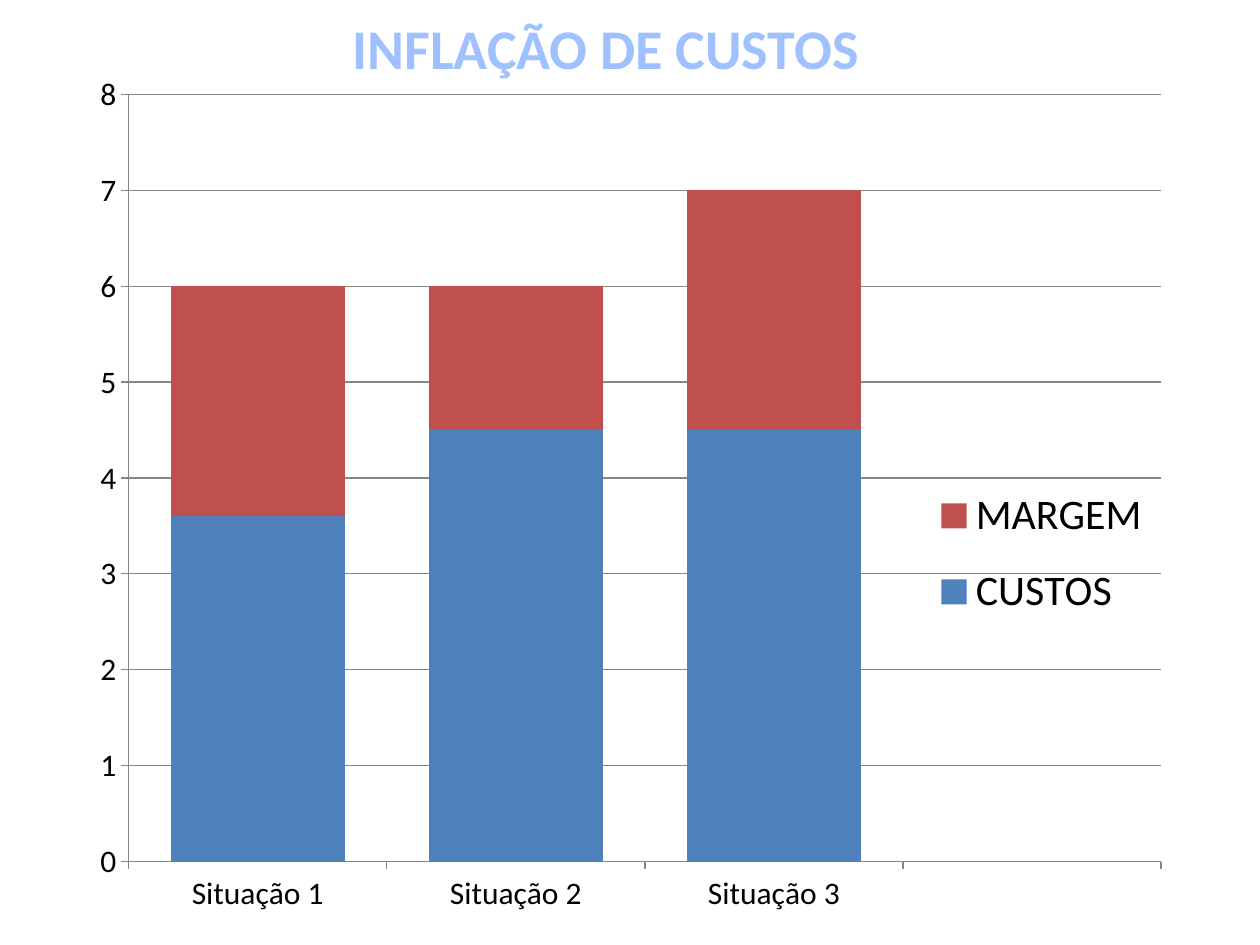
from lxml import etree
from pptx import Presentation
from pptx.chart.data import CategoryChartData
from pptx.dml.color import RGBColor
from pptx.enum.chart import XL_CHART_TYPE, XL_TICK_MARK
from pptx.enum.text import MSO_ANCHOR, PP_ALIGN
from pptx.oxml.ns import qn
from pptx.util import Cm, Pt

STACKED = XL_CHART_TYPE.COLUMN_STACKED
TICK_OUT, TICK_NONE = XL_TICK_MARK.OUTSIDE, XL_TICK_MARK.NONE
LEFT, MIDDLE = PP_ALIGN.LEFT, MSO_ANCHOR.MIDDLE

THEME = {
    "font": "Calibri",
    "title_size": Pt(32),
    "axis_size": Pt(18),
    "legend_size": Pt(24),
    "line_width": Pt(0.75),
    "title": RGBColor.from_string("A0C1FF"),
    "text": RGBColor.from_string("000000"),
    "line": RGBColor.from_string("868686"),
    "series": {
        "CUSTOS": RGBColor.from_string("4F81BD"),
        "MARGEM": RGBColor.from_string("C0504D"),
    },
}


def format_font(font, size, color, bold=False):
    for name, value in {"name": THEME["font"], "size": size, "bold": bold}.items():
        setattr(font, name, value)
    font.color.rgb = color


def place_in_chart(element, index, fractions, inner=False):
    """Give a chart part a manual layout, in fractions of the chart's size."""
    for old in element.findall(qn("c:layout")):
        element.remove(old)
    layout = etree.Element(qn("c:layout"))
    manual = etree.SubElement(layout, qn("c:manualLayout"))
    settings = {"layoutTarget": "inner"} if inner else {}
    settings |= {"xMode": "edge", "yMode": "edge"}
    settings |= dict(zip("xywh", fractions))
    for tag, value in settings.items():
        etree.SubElement(manual, qn(f"c:{tag}")).set("val", str(value))
    element.insert(index, layout)


prs = Presentation()
prs.slide_width, prs.slide_height = Cm(25.4), Cm(19.05)
slide = prs.slides.add_slide(prs.slide_layouts[5])

# Title
title = slide.shapes.title
title_place = {"left": Cm(5.31), "top": Cm(0.13), "width": Cm(15), "height": Cm(1.63)}
for name, value in title_place.items():
    setattr(title, name, value)
title_frame = title.text_frame
title_frame.text = "INFLAÇÃO DE CUSTOS"
title_frame.margin_left = Cm(1.8)
title_frame.vertical_anchor = MIDDLE
title_frame.paragraphs[0].alignment = LEFT
format_font(title_frame.paragraphs[0].runs[0].font,
            THEME["title_size"], THEME["title"], bold=True)

# Costs and margin; the empty fourth category leaves room for the legend
costs = CategoryChartData()
costs.categories = ["Situação 1", "Situação 2", "Situação 3", ""]
costs.add_series("CUSTOS", [3.6, 4.5, 4.5, None])
costs.add_series("MARGEM", [2.4, 1.5, 2.5, None])
chart = slide.shapes.add_chart(
    STACKED, Cm(1.5), Cm(1.52), Cm(21.92), Cm(17.04), costs).chart
chart.has_title = False
format_font(chart.font, THEME["axis_size"], THEME["text"])

columns = chart.plots[0]
for name, value in {"gap_width": 48, "overlap": 100, "vary_by_categories": False}.items():
    setattr(columns, name, value)
for series in columns.series:
    series.format.fill.solid()
    series.format.fill.fore_color.rgb = THEME["series"][series.name]

# Axes
scale = {"minimum_scale": 0, "maximum_scale": 8, "major_unit": 1,
         "has_major_gridlines": True}
for name, value in scale.items():
    setattr(chart.value_axis, name, value)
chart.category_axis.has_major_gridlines = False
for axis in (chart.category_axis, chart.value_axis):
    axis.major_tick_mark, axis.minor_tick_mark = TICK_OUT, TICK_NONE
for ruled in (chart.category_axis, chart.value_axis, chart.value_axis.major_gridlines):
    ruled.format.line.color.rgb = THEME["line"]
    ruled.format.line.width = THEME["line_width"]

# Legend
chart.has_legend = True
chart.legend.include_in_layout = False
format_font(chart.legend.font, THEME["legend_size"], THEME["text"])

plot_area = chart.element.find(f".//{qn('c:plotArea')}")
legend = chart.element.find(f".//{qn('c:legend')}")
place_in_chart(plot_area, 0, (0.05, 0.02, 0.95, 0.91), inner=True)
place_in_chart(legend, 1, (0.79, 0.46, 0.2, 0.21))

prs.save("out.pptx")
